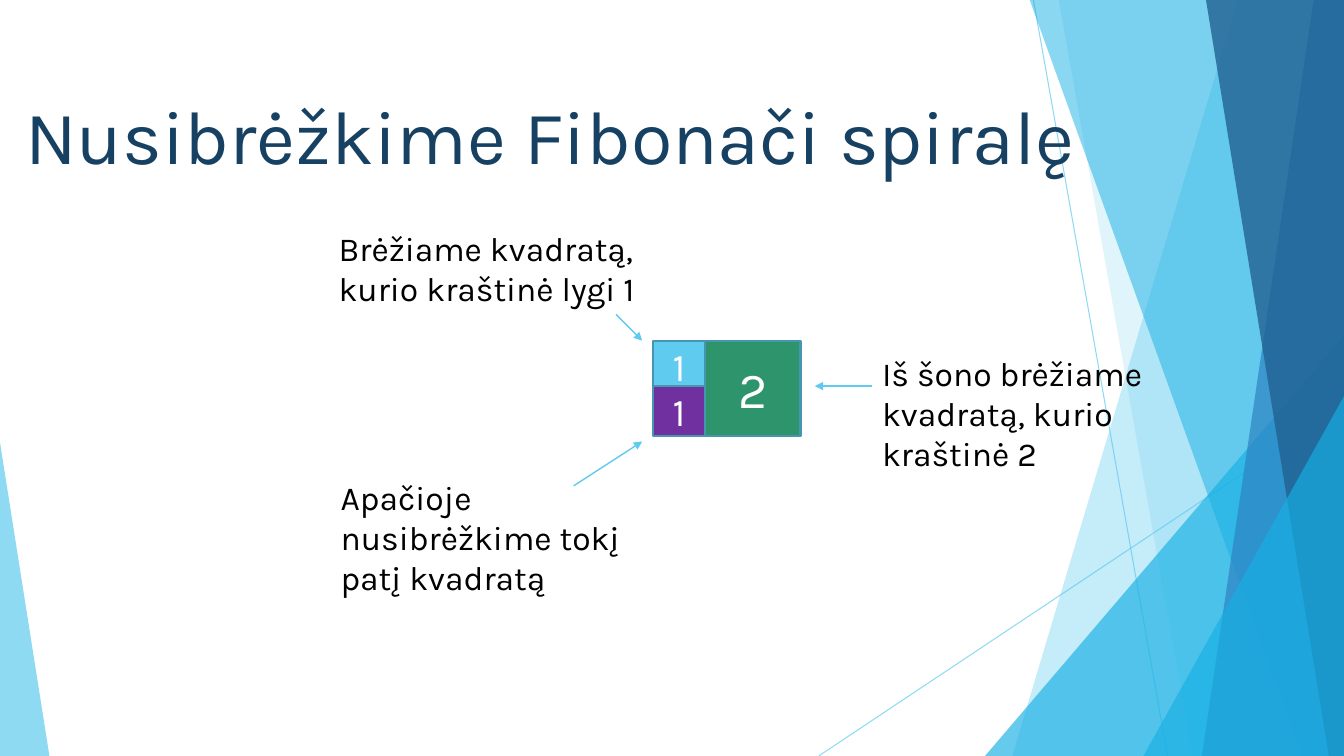
from typing import NamedTuple

from lxml.etree import SubElement
from pptx import Presentation
from pptx.dml.color import RGBColor
from pptx.enum.shapes import MSO_CONNECTOR as Connector, MSO_SHAPE as Preset
from pptx.enum.text import MSO_ANCHOR as Anchor, MSO_AUTO_SIZE as AutoSize, PP_ALIGN as Align
from pptx.oxml.ns import qn
from pptx.util import Inches, Pt

WIDTH, HEIGHT = 13.33, 7.5
BAND_TOP = -0.01
FONT = "Karla"
COLORS = {
    "sky": "5FCBEF", "cyan": "17B0E4", "blue": "2E83C3", "navy": "226292",
    "title": "174162", "black": "000000", "white": "FFFFFF",
    "purple": "7030A0", "green": "2E946B", "edge": "4696B1",
}


class Band(NamedTuple):
    """A strip with a slanted left side that runs to the right slide edge."""
    top_x: float
    bottom_x: float
    color: str
    opacity: int


class Triangle(NamedTuple):
    """A right triangle standing on the bottom slide edge."""
    left: float
    top: float
    width: float
    apex: float
    color: str
    opacity: int


class Line(NamedTuple):
    start: tuple[float, float]
    end: tuple[float, float]


class Note(NamedTuple):
    left: float
    top: float
    width: float
    height: float
    text: str


class Square(NamedTuple):
    left: float
    top: float
    width: float
    height: float
    label: str
    size: int
    color: str


DECOR_LINES = [Line((10.25, 0), (11.58, HEIGHT)), Line((WIDTH, 4.03), (8.12, HEIGHT))]
DECOR = [
    Band(12.28, 10.04, "sky", 36),
    Band(10.5, 11.83, "sky", 20),
    Triangle(9.77, 3.33, 3.56, 1, "cyan", 66),
    Band(10.21, 12.91, "cyan", 50),
    Band(13.03, 11.92, "blue", 70),
    Band(11.96, 13.18, "navy", 80),
    Triangle(11.34, 3.93, 1.99, 1, "cyan", 66),
    Triangle(0, 4.39, 0.49, 0, "sky", 70),
]
NOTES = [
    Note(3.26, 2.21, 3.4, 0.91, "Brėžiame kvadratą, kurio kraštinė lygi 1"),
    Note(3.28, 4.68, 3.37, 1.31, "Apačioje nusibrėžkime tokį patį kvadratą"),
    Note(8.65, 3.45, 3.37, 1.31, "Iš šono brėžiame kvadratą, kurio kraštinė 2"),
]
SQUARES = [
    Square(6.48, 3.38, 0.51, 0.5, "1", 28, "sky"),
    Square(6.48, 3.83, 0.51, 0.5, "1", 28, "purple"),
    Square(6.99, 3.38, 0.95, 0.95, "2", 36, "green"),
]
ARROWS = [
    Line((6.11, 3.12), (6.37, 3.38)),
    Line((5.69, 4.82), (6.37, 4.38)),
    Line((8.65, 3.83), (8.08, 3.83)),
]


def rgb(name: str) -> RGBColor:
    return RGBColor.from_string(COLORS[name])


def set_opacity(fill_parent, percent: int) -> None:
    color = fill_parent.find(qn("a:solidFill"))[0]
    SubElement(color, qn("a:alpha"), val=str(percent * 1000))


def write_text(shape, text: str, *, size: int, color: str = "black",
               align=Align.LEFT, anchor=Anchor.TOP, auto_size=AutoSize.NONE) -> None:
    frame = shape.text_frame
    frame.word_wrap = True
    frame.auto_size = auto_size
    frame.vertical_anchor = anchor
    para = frame.paragraphs[0]
    para.alignment = align
    span = para.add_run()
    span.text = text
    span.font.name = FONT
    span.font.size = Pt(size)
    span.font.color.rgb = rgb(color)


def draw_line(page, line: Line, *, width: float, opacity: int = 100, arrow: bool = False) -> None:
    points = [Inches(value) for value in (*line.start, *line.end)]
    connector = page.shapes.add_connector(Connector.STRAIGHT, *points)
    connector.line.width = Pt(width)
    connector.line.color.rgb = rgb("sky")
    properties = connector._element.spPr
    outline = properties.find(qn("a:ln"))
    if opacity < 100:
        set_opacity(outline, opacity)
    if arrow:
        SubElement(outline, qn("a:tailEnd"), type="triangle")
    SubElement(properties, qn("a:effectLst"))


def draw_decor(page, part: Band | Triangle) -> None:
    if isinstance(part, Band):
        corners = [(WIDTH, BAND_TOP), (WIDTH, HEIGHT), (part.bottom_x, HEIGHT)]
        builder = page.shapes.build_freeform(
            Inches(part.top_x), Inches(BAND_TOP))
        builder.add_line_segments([(Inches(x), Inches(y)) for x, y in corners])
        shape = builder.convert_to_shape()
    else:
        shape = page.shapes.add_shape(
            Preset.ISOSCELES_TRIANGLE, Inches(part.left), Inches(part.top),
            Inches(part.width), Inches(HEIGHT - part.top))
        shape.adjustments[0] = part.apex
    shape.shadow.inherit = False
    shape.line.fill.background()
    shape.fill.solid()
    shape.fill.fore_color.rgb = rgb(part.color)
    set_opacity(shape._element.spPr, part.opacity)


def draw_note(page, note: Note) -> None:
    box = page.shapes.add_textbox(*(Inches(value) for value in note[:4]))
    write_text(box, note.text, size=24, auto_size=AutoSize.SHAPE_TO_FIT_TEXT)


def draw_square(page, square: Square) -> None:
    shape = page.shapes.add_shape(Preset.RECTANGLE, *(Inches(value) for value in square[:4]))
    shape.shadow.inherit = False
    shape.fill.solid()
    shape.fill.fore_color.rgb = rgb(square.color)
    shape.line.color.rgb = rgb("edge")
    shape.line.width = Pt(1.5)
    write_text(shape, square.label, size=square.size, color="white",
               align=Align.CENTER, anchor=Anchor.MIDDLE)


def main() -> None:
    deck = Presentation()
    deck.slide_width, deck.slide_height = Inches(WIDTH), Inches(HEIGHT)
    page = deck.slides.add_slide(deck.slide_layouts[5])

    # Background facets
    for line in DECOR_LINES:
        draw_line(page, line, width=0.75, opacity=70)
    for part in DECOR:
        draw_decor(page, part)

    # Title, raised above the facets
    title = page.shapes.title
    title.left, title.top = Inches(0.15), Inches(0.83)
    title.width, title.height = Inches(11.09), Inches(1.44)
    write_text(title, "Nusibrėžkime Fibonači spiralę", size=54, color="title")
    page.shapes._spTree.append(title._element)

    # Explanations, squares and arrows
    for note in NOTES:
        draw_note(page, note)
    for square in SQUARES:
        draw_square(page, square)
    for arrow in ARROWS:
        draw_line(page, arrow, width=1, arrow=True)

    deck.save("out.pptx")


if __name__ == "__main__":
    main()
